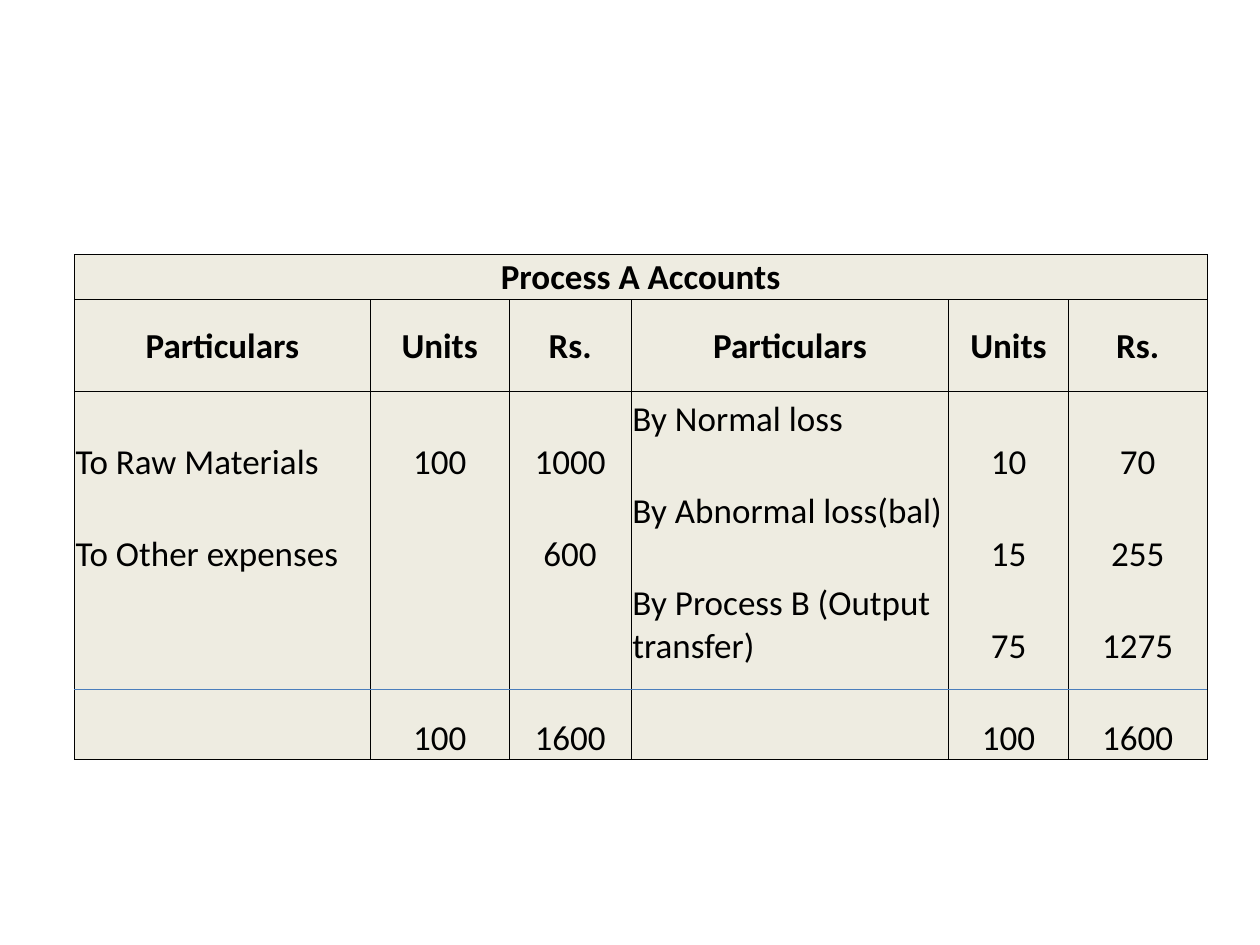
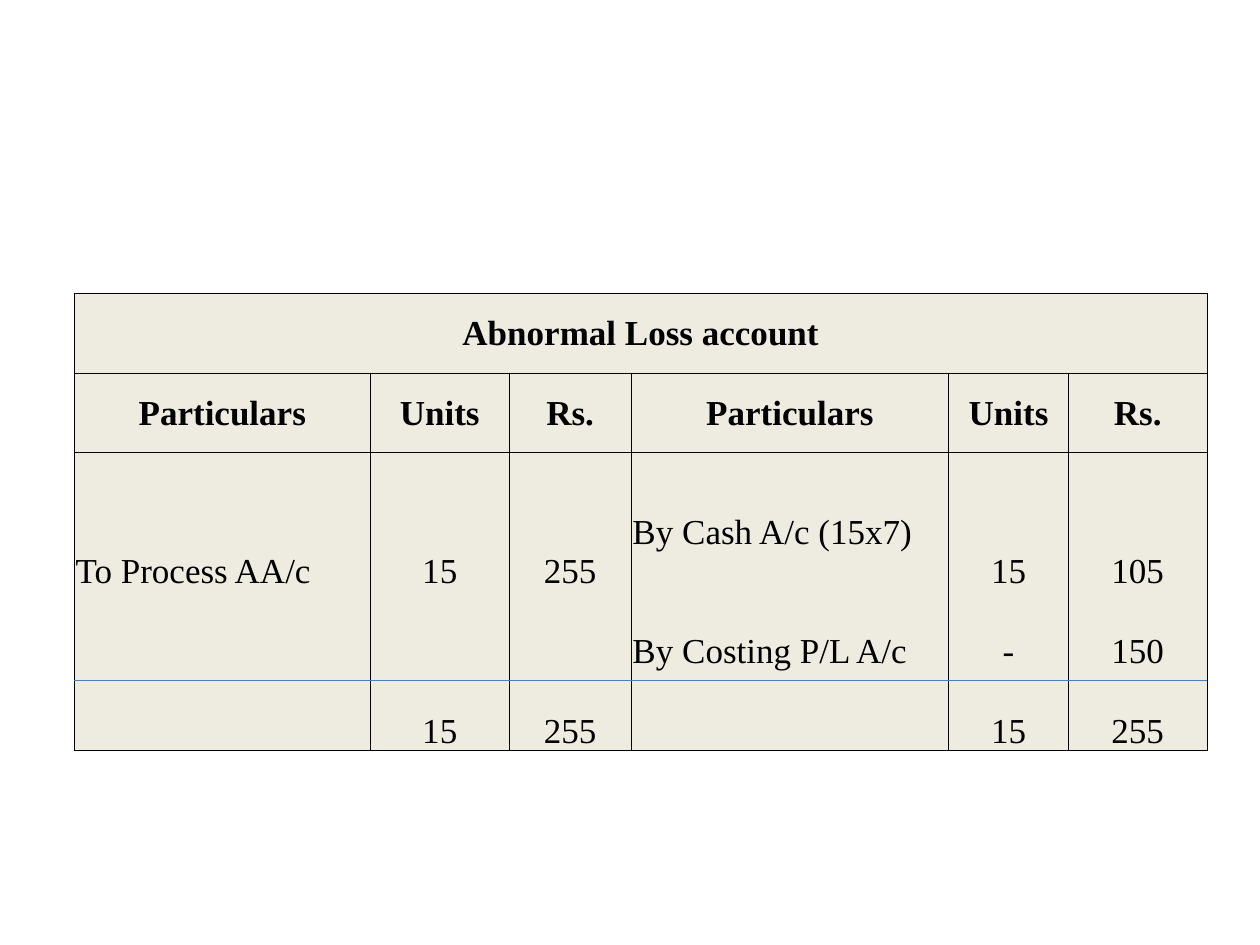
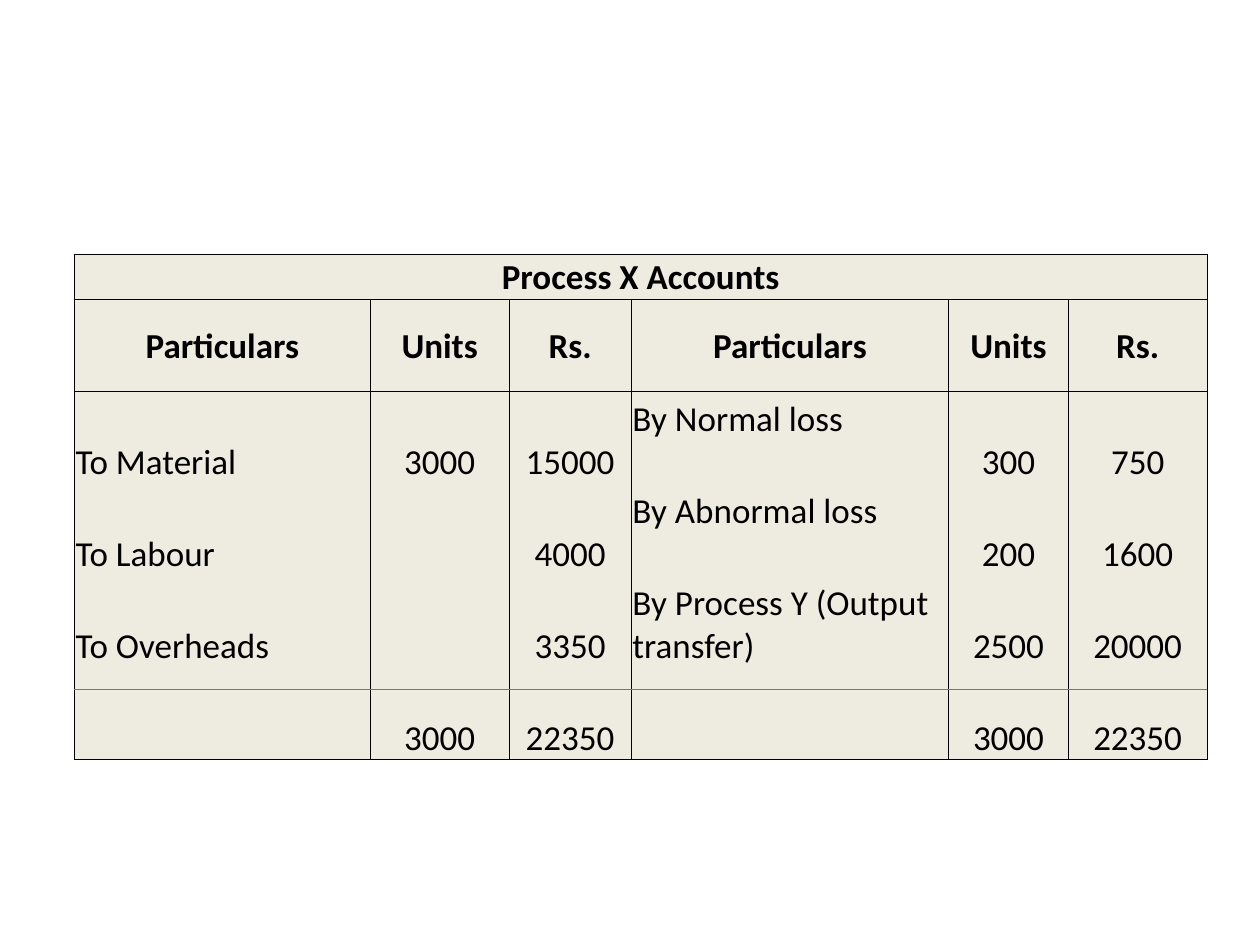
from dataclasses import dataclass

from lxml import etree
from pptx import Presentation
from pptx.dml.color import RGBColor
from pptx.enum.shapes import MSO_CONNECTOR
from pptx.enum.text import MSO_ANCHOR, PP_ALIGN
from pptx.oxml.ns import qn
from pptx.util import Inches, Pt

STRAIGHT = MSO_CONNECTOR.STRAIGHT
LEFT, CENTER = PP_ALIGN.LEFT, PP_ALIGN.CENTER
MIDDLE, BOTTOM = MSO_ANCHOR.MIDDLE, MSO_ANCHOR.BOTTOM

COLORS = {"ink": "000000", "paper": "EEECE1", "rule": "4B7EBC"}

# Grid: the slide is 1000 by 750 units
UNIT = Inches(0.01)
SIDE = 59
COLS = (235, 110, 97, 252, 95, 110)
DROP = 56  # from the total rule down to the table's foot
CREDIT = 3  # column of the "By" entries
HEADS = ("Particulars", "Units", "Rs.") * 2
SIZE = Pt(20)
EDGE = Pt(0.5)

Row = tuple[str, str, str, str, str, str]


@dataclass
class Ledger:
    title: str
    font: str
    top: int
    rows: tuple[int, ...]
    line: int  # height of one text line
    body: list[Row]


TALL = (36,) + (73,) * 5
LEDGERS = [
    Ledger("Process A Accounts", "Calibri", 202, TALL, 34, [
        ("To Raw Materials", "100", "1000", "By Normal loss", "10", "70"),
        ("To Other expenses", "", "600", "By Abnormal loss(bal)", "15", "255"),
        ("", "", "", "By Process B (Output transfer)", "75", "1275"),
        ("", "100", "1600", "", "100", "1600"),
    ]),
    Ledger("Abnormal Loss account", "Times New Roman", 233, (63, 63, 110, 64, 63), 31, [
        ("To Process AA/c", "15", "255", "By Cash A/c (15x7)", "15", "105"),
        ("", "", "", "By Costing P/L A/c", "-", "150"),
        ("", "15", "255", "", "15", "255"),
    ]),
    Ledger("Process X Accounts", "Calibri", 202, TALL, 34, [
        ("To Material", "3000", "15000", "By Normal loss", "300", "750"),
        ("To Labour", "", "4000", "By Abnormal loss", "200", "1600"),
        ("To Overheads", "", "3350", "By Process Y (Output transfer)", "2500", "20000"),
        ("", "3000", "22350", "", "3000", "22350"),
    ]),
]


def color(name: str) -> RGBColor:
    return RGBColor.from_string(COLORS[name])


def frame(cell, sides: str) -> None:
    """Draw the named sides (L, R, T, B) and clear the others."""
    props = cell._tc.get_or_add_tcPr()
    for side in "LRTB":
        line = etree.SubElement(props, qn(f"a:ln{side}"), w=str(EDGE))
        if side in sides:
            fill = etree.SubElement(line, qn("a:solidFill"))
            etree.SubElement(fill, qn("a:srgbClr"), val=COLORS["ink"])
        else:
            etree.SubElement(line, qn("a:noFill"))


def write(cell, text: str, font: str, bold: bool, align: PP_ALIGN) -> None:
    cell.margin_left = cell.margin_right = cell.margin_top = UNIT
    cell.margin_bottom = 0
    cell.vertical_anchor = MIDDLE if bold else BOTTOM
    cell.text = text
    para = cell.text_frame.paragraphs[0]
    para.alignment = align
    para.font.name, para.font.size, para.font.bold = font, SIZE, bold
    para.font.color.rgb = color("ink")


def add_rule(slide, y: int) -> None:
    line = slide.shapes.add_connector(
        STRAIGHT, SIDE * UNIT, y * UNIT, (SIDE + sum(COLS)) * UNIT, y * UNIT)
    line.line.color.rgb = color("rule")
    line.line.width = Pt(0.75)
    etree.SubElement(line._element.spPr, qn("a:effectLst"))


def add_ledger(slide, book: Ledger) -> None:
    high = sum(book.rows)
    table = slide.shapes.add_table(
        len(book.rows), len(COLS), SIDE * UNIT, book.top * UNIT,
        sum(COLS) * UNIT, high * UNIT).table
    table.first_row = table.horz_banding = False
    for col, width in zip(table.columns, COLS):
        col.width = width * UNIT
    for row, height in zip(table.rows, book.rows):
        row.height = height * UNIT

    # Title, headings, entries and totals
    title = (book.title,) + ("",) * (len(COLS) - 1)
    last = len(book.rows) - 1
    for r, texts in enumerate([title, HEADS, *book.body]):
        head = r < 2
        sides = "LR" + "T" * (r <= 2) + "B" * (head or r == last)
        for c, text in enumerate(texts):
            cell = table.cell(r, c)
            frame(cell, sides)
            cell.fill.solid()
            cell.fill.fore_color.rgb = color("paper")
            name = not head and c in (0, CREDIT)
            write(cell, text, book.font, head, LEFT if name else CENTER)
            # Every credit entry but the final one sits a line higher
            if c == CREDIT and 2 <= r < last - 1:
                cell.margin_bottom = book.line * UNIT
    table.cell(0, 0).merge(table.cell(0, len(COLS) - 1))
    add_rule(slide, book.top + high - DROP)


def main() -> None:
    deck = Presentation()
    deck.slide_width, deck.slide_height = 1000 * UNIT, 750 * UNIT
    for book in LEDGERS:
        add_ledger(deck.slides.add_slide(deck.slide_layouts[6]), book)
    deck.save("out.pptx")


if __name__ == "__main__":
    main()
